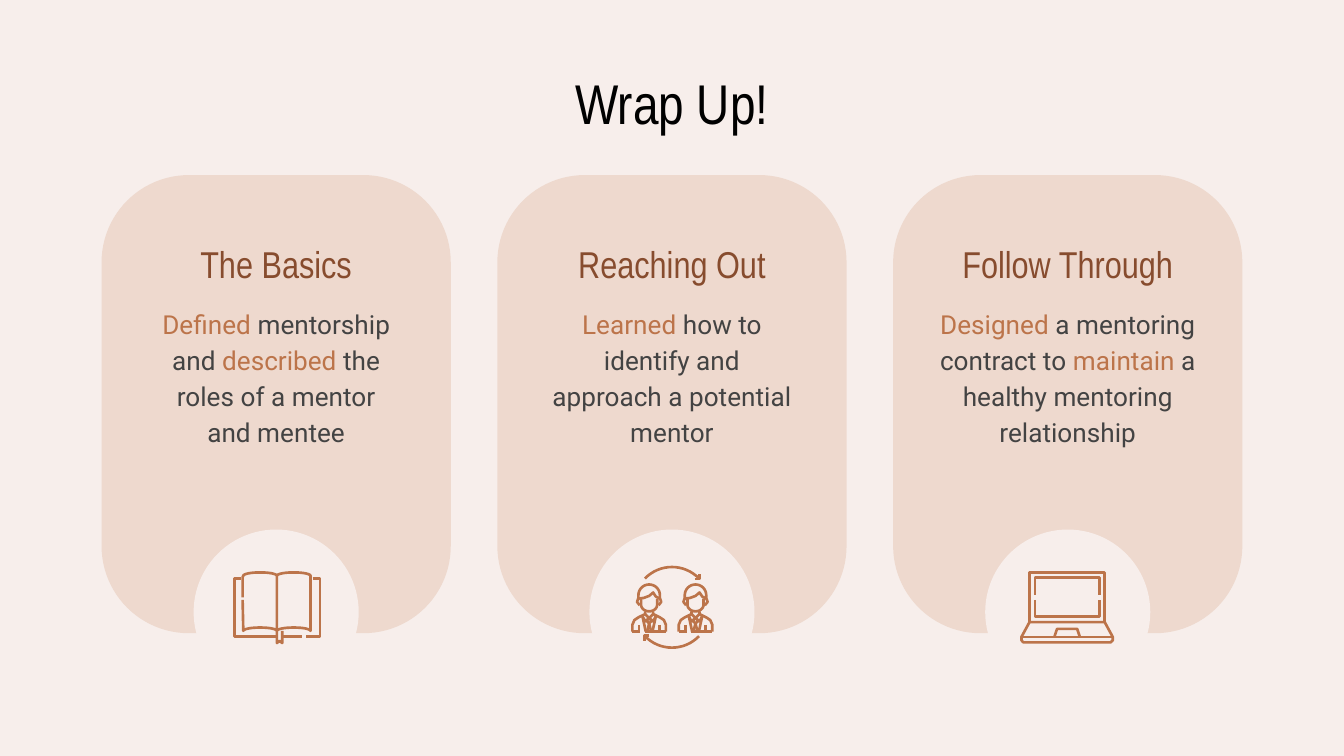
from math import cos, radians, sin

from pptx import Presentation
from pptx.dml.color import RGBColor
from pptx.enum.shapes import MSO_SHAPE as Preset
from pptx.enum.text import MSO_ANCHOR as Anchor, PP_ALIGN as Align
from pptx.util import Cm, Pt

BLUSH = RGBColor(0xF7, 0xEE, 0xEB)
SAND = RGBColor(0xEE, 0xD9, 0xCE)
COPPER = RGBColor(0xBC, 0x74, 0x4A)
BROWN = RGBColor(0x87, 0x4C, 0x2E)
GREY = RGBColor(0x43, 0x43, 0x43)
BLACK = RGBColor(0x00, 0x00, 0x00)

TITLE_FONT = {"name": "Arial Narrow", "size": Pt(30)}
HEADING_FONT = {"name": "Arial Narrow", "size": Pt(20)}
BODY_FONT = {"name": "Roboto", "size": Pt(14)}

ICON_UNIT = Cm(2.54) / 100  # icon points are counted from the disc centre


def arc(center_x, center_y, radius_x, radius_y, start, end, steps=16):
    """Points along an ellipse; angles in degrees, clockwise from the right."""
    angles = [radians(start + (end - start) * i / steps) for i in range(steps + 1)]
    return [(center_x + radius_x * cos(a), center_y + radius_y * sin(a)) for a in angles]


def book_strokes():
    return [
        # Cover
        [(-26, -25), (-31, -25), (-31, 18), (0.5, 18)],
        [(27, -25), (32.5, -25), (32.5, 18), (22.5, 18)],
        [(19, 18), (4.5, 18)],
        # Left and right page
        [(-25, -11), (-25, -26), *arc(-12, -27, 12.5, 2.5, 180, 360),
         (0.5, 14), *arc(-12, 14, 12.5, 2.5, 360, 180), (-25, -9)],
        [(0.5, -27), *arc(13, -27, 12.5, 2.5, 180, 360),
         (25.5, 14), *arc(13, 14, 12.5, 2.5, 360, 180)],
        # Ribbon
        [(0.5, 14), (0.5, 23), (2.5, 21.5), (4.5, 23), (4.5, 14)],
    ]


def person_strokes(center_x):
    strokes = [
        # Hair, fringe and face
        [(-7, -5), (-9, -7.5), (-8, -10.5), *arc(0, -12.5, 8, 8, 180, 360),
         (8, -10.5), (9, -7.5), (7, -5)],
        [(-8, -10), (-4, -10.5), (0, -12), (3, -14.5), (5, -11.5), (8, -10)],
        [(-6, -10), *arc(0, -5.5, 6, 5, 180, 0), (6, -10)],
        # Hem of the jacket
        [(-12.5, 14.5), (-6.5, 14.5)],
        [(-3, 14.5), (12.5, 14.5)],
    ]
    for side in (-1, 1):
        half = [
            # Neck and shoulder, arm, lapel, collar, tie
            [(3, -0.5), (3, 1.5), (8, 4), (11, 6), (12.5, 9.5), (12.5, 14.5)],
            [(7.5, 9.5), (7.5, 14.5)],
            [(5, 3), (2.5, 14.5)],
            [(3, 1.5), (0, 4.5), (3, 7), (5, 3)],
            [(0, 4.5), (-2, 6.5), (0, 8.5), (1.5, 14.5)],
        ]
        strokes += [[(side * x, y) for x, y in stroke] for stroke in half]
    return [[(center_x + x, y) for x, y in stroke] for stroke in strokes]


def exchange_strokes():
    arrow = [arc(0, -5.5, 28, 28, 224, 316), [(17, -24.5), (20.5, -24.5), (20.5, -28.5)]]
    return_arrow = [[(-x, -7 - y) for x, y in stroke] for stroke in arrow]
    return arrow + return_arrow + person_strokes(-17) + person_strokes(17.5)


def laptop_strokes():
    return [
        # Lid and base
        [(-28.5, 7.5), (-28.5, -29.5), (27.5, -29.5), (27.5, 7.5)],
        [(-28.5, 7.5), (-34.5, 18.5), (-34.5, 21), (-33, 22.5), (32, 22.5),
         (33.5, 21), (33.5, 18.5), (27.5, 7.5), (-28.5, 7.5)],
        [(-34.5, 18.5), (33.5, 18.5)],
        # Trackpad
        [(-10, 18.5), (-8, 12.5), (7, 12.5), (9, 18.5)],
        # Screen
        [(-24.5, -13), (-24.5, -25.5), (23.5, -25.5), (23.5, -13)],
        [(-24.5, -9), (-24.5, 3.5), (23.5, 3.5), (23.5, -9)],
    ]


CARDS = [
    ("The Basics", book_strokes(), 5.08,
     [("Defined", COPPER), (" mentorship and ", GREY), ("described", COPPER),
      (" the roles of a mentor and mentee", GREY)]),
    ("Reaching Out", exchange_strokes(), 5.08,
     [("Learned", COPPER), (" how to identify and approach a potential mentor", GREY)]),
    ("Follow Through", laptop_strokes(), 5.61,
     [("Designed", COPPER), (" a mentoring contract to ", GREY), ("maintain", COPPER),
      (" a healthy mentoring relationship", GREY)]),
]


def add_panel(slide, preset, color, left, top, width, height):
    shape = slide.shapes.add_shape(preset, Cm(left), Cm(top), Cm(width), Cm(height))
    shape.shadow.inherit = False
    shape.fill.solid()
    shape.fill.fore_color.rgb = color
    shape.line.fill.background()
    return shape


def add_text(slide, runs, font, anchor, left, top, width, height, spacing=1.0):
    box = slide.shapes.add_textbox(Cm(left), Cm(top), Cm(width), Cm(height))
    frame = box.text_frame
    frame_format = {"word_wrap": True, "vertical_anchor": anchor}
    for side in ("left", "top", "right", "bottom"):
        frame_format[f"margin_{side}"] = Cm(0.25)
    for name, value in frame_format.items():
        setattr(frame, name, value)
    paragraph = frame.paragraphs[0]
    paragraph.alignment = Align.CENTER
    paragraph.line_spacing = spacing
    for text, color in runs:
        run = paragraph.add_run()
        run.text = text
        run.font.color.rgb = color
        for name, value in font.items():
            setattr(run.font, name, value)


def add_icon(slide, strokes, center_x, center_y):
    """Line drawing as one outline with several open strokes."""
    scaled = [[(x * ICON_UNIT, y * ICON_UNIT) for x, y in stroke] for stroke in strokes]
    builder = slide.shapes.build_freeform(*scaled[0][0])
    for index, stroke in enumerate(scaled):
        if index:
            builder.move_to(*stroke[0])
        builder.add_line_segments(stroke[1:], close=False)
    icon = builder.convert_to_shape(Cm(center_x), Cm(center_y))
    icon.shadow.inherit = False
    icon.fill.background()
    icon.line.color.rgb = COPPER
    icon.line.width = Cm(0.05)


def add_card(slide, card, left, top, width, height):
    heading, strokes, body_width, body = card
    middle = left + width / 2
    # Panel with the disc cut into its lower edge
    panel = add_panel(slide, Preset.ROUNDED_RECTANGLE, SAND, left, top, width, height)
    panel.adjustments[0] = 0.25
    disc = 3.12
    disc_top = top + 6.7
    add_panel(slide, Preset.OVAL, BLUSH, middle - disc / 2, disc_top, disc, disc)
    # Heading and body
    add_text(slide, [(heading, BROWN)], HEADING_FONT, Anchor.BOTTOM,
             middle - 2.8, top + 1.44, 5.6, 0.91)
    add_text(slide, body, BODY_FONT, Anchor.TOP,
             middle - body_width / 2, top + 2.18, body_width, 3.66, 1.15)
    add_icon(slide, strokes, middle, disc_top + disc / 2)


def build_wrap_up(presentation):
    slide = presentation.slides.add_slide(presentation.slide_layouts[6])
    slide.background.fill.solid()
    slide.background.fill.fore_color.rgb = BLUSH
    add_text(slide, [("Wrap Up!", BLACK)], TITLE_FONT, Anchor.MIDDLE, 1.27, 1.14, 22.86, 1.6)
    for index, card in enumerate(CARDS):
        add_card(slide, card, 1.92 + index * 7.48, 3.31, 6.6, 8.66)


def main():
    presentation = Presentation()
    presentation.slide_width, presentation.slide_height = Cm(25.4), Cm(14.29)
    build_wrap_up(presentation)
    presentation.save("out.pptx")


if __name__ == "__main__":
    main()
